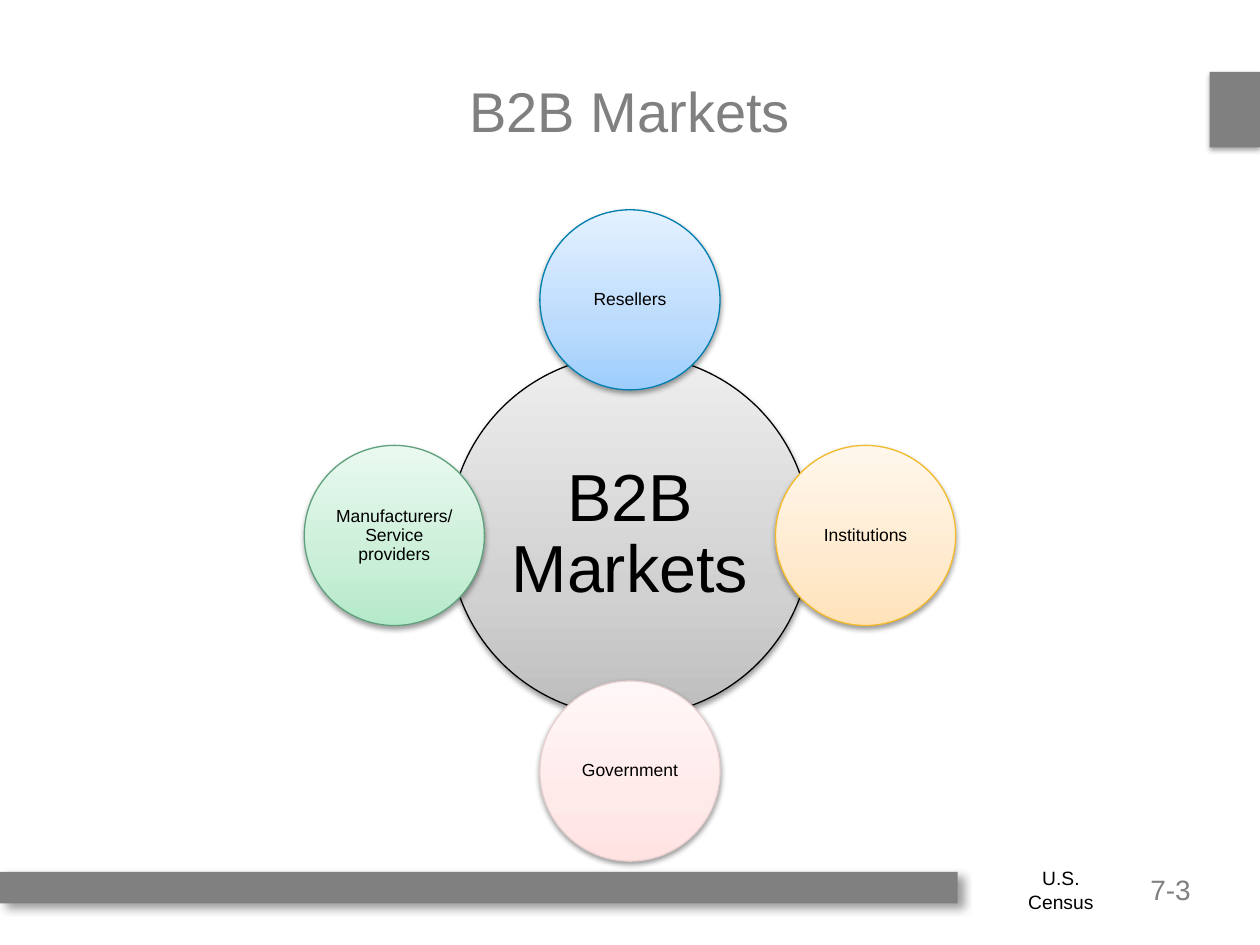
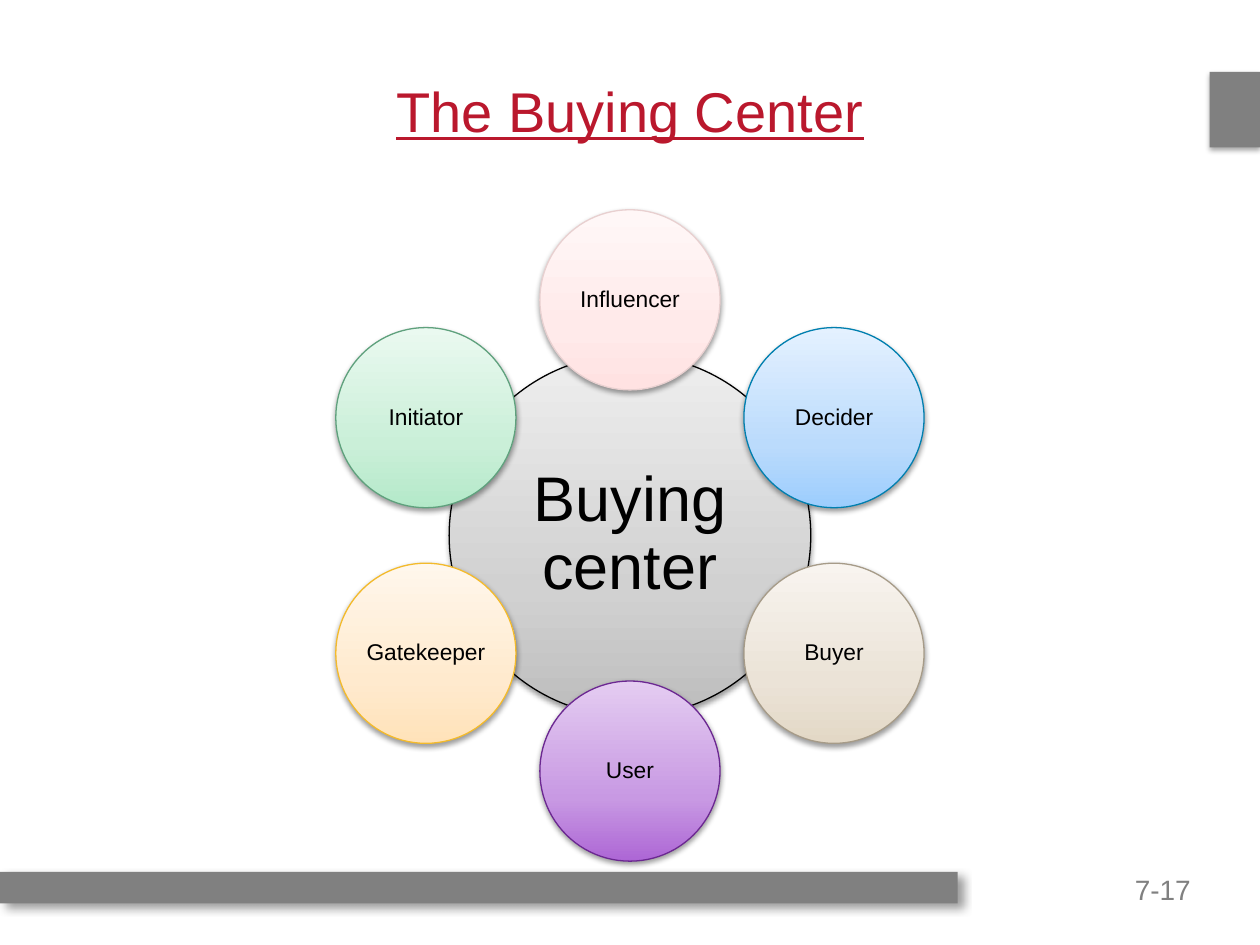
import copy
import math

from lxml import etree
from pptx import Presentation
from pptx import util as u
from pptx.dml.color import RGBColor
from pptx.enum import shapes, text
from pptx.oxml import ns

FONT = "Arial"
GRAY = RGBColor(0x80, 0x80, 0x80)
RED = RGBColor(0xBA, 0x18, 0x2D)
BLACK = RGBColor(0x00, 0x00, 0x00)
WHITE = RGBColor(0xFF, 0xFF, 0xFF)

# Each circle style: outline, then gradient colours from bottom to top
HUB_GRAY = (BLACK, RGBColor(0xBD, 0xBD, 0xBD), RGBColor(0xD1, 0xD1, 0xD1), RGBColor(0xEE, 0xEE, 0xEE))
BLUE = (RGBColor(0x00, 0x7F, 0xAF), RGBColor(0x9C, 0xCD, 0xFD), RGBColor(0xBB, 0xDB, 0xFC), RGBColor(0xE4, 0xF1, 0xFF))
ORANGE = (RGBColor(0xF3, 0xBA, 0x2B), RGBColor(0xFF, 0xE2, 0xB9), RGBColor(0xFF, 0xEA, 0xCE), RGBColor(0xFF, 0xF7, 0xEC))
PINK = (RGBColor(0xE8, 0xD0, 0xD0), RGBColor(0xFF, 0xE2, 0xE2), RGBColor(0xFF, 0xEA, 0xEA), RGBColor(0xFF, 0xF7, 0xF7))
GREEN = (RGBColor(0x5F, 0xA1, 0x7D), RGBColor(0xB4, 0xE9, 0xC9), RGBColor(0xCA, 0xEF, 0xD8), RGBColor(0xEA, 0xF9, 0xF0))
BEIGE = (RGBColor(0xA6, 0x9B, 0x88), RGBColor(0xE3, 0xD8, 0xC6), RGBColor(0xEB, 0xE3, 0xD7), RGBColor(0xF8, 0xF4, 0xEF))
PURPLE = (RGBColor(0x6B, 0x28, 0x91), RGBColor(0xAD, 0x66, 0xD5), RGBColor(0xC8, 0x99, 0xE3), RGBColor(0xE4, 0xCC, 0xF1))
GRADIENT_POSITIONS = (0, 0.35, 1)

# Radial diagram geometry, in inches
CENTER_X, CENTER_Y = 5, 4.25
ORBIT_RADIUS = 1.87
HUB_SIZE, SATELLITE_SIZE = 2.87, 1.43

# Satellites run clockwise from the top
SLIDES = [
    {
        "title": "B2B Markets", "title_color": GRAY, "underline": None, "number": "7-3",
        "hub": "B2B Markets", "hub_size": 38, "satellite_size": 10, "margin": 0.01,
        "satellites": [("Resellers", BLUE), ("Institutions", ORANGE), ("Government", PINK),
                       ("Manufacturers/ Service providers", GREEN)],
        "source": "U.S.\vCensus",
    },
    {
        "title": "The Buying Center", "title_color": RED, "underline": True, "number": "7-17",
        "hub": "Buying center", "hub_size": 36, "satellite_size": 13, "margin": 0.02,
        "satellites": [("Influencer", PINK), ("Decider", BLUE), ("Buyer", BEIGE),
                       ("User", PURPLE), ("Gatekeeper", ORANGE), ("Initiator", GREEN)],
        "source": None,
    },
]


def add_shadow(shape, opacity, blur, distance, angle):
    shape.shadow.inherit = False
    effects = shape._element.spPr.find(ns.qn("a:effectLst"))
    shadow = etree.SubElement(effects, ns.qn("a:outerShdw"), blurRad=str(u.Pt(blur)),
                              dist=str(u.Pt(distance)), dir=str(angle * 60000),
                              algn="tl", rotWithShape="0")
    color = etree.SubElement(shadow, ns.qn("a:srgbClr"), val=str(BLACK))
    etree.SubElement(color, ns.qn("a:alpha"), val=str(opacity * 1000))


def write_text(shape, words, size, color, margins, align=text.PP_ALIGN.CENTER,
               anchor=text.MSO_ANCHOR.MIDDLE, spacing=1.0):
    frame = shape.text_frame
    frame.word_wrap = True
    frame.vertical_anchor = anchor
    frame.margin_left = frame.margin_right = u.Inches(margins[0])
    frame.margin_top = frame.margin_bottom = u.Inches(margins[1])
    paragraph = frame.paragraphs[0]
    paragraph.text = words
    paragraph.alignment = align
    paragraph.line_spacing = spacing
    for run in paragraph.runs:
        run.font.name = FONT
        run.font.size = u.Pt(size)
        run.font.color.rgb = color
    return paragraph


presentation = Presentation()
presentation.slide_width = u.Inches(10)
presentation.slide_height = u.Inches(7.5)

for content in SLIDES:
    slide = presentation.slides.add_slide(presentation.slide_layouts[6])
    slide.background.fill.solid()
    slide.background.fill.fore_color.rgb = WHITE

    # Page number
    number = slide.shapes.add_textbox(u.Inches(7.5), u.Inches(6.92), u.Inches(1.95), u.Inches(0.25))
    write_text(number, content["number"], 16, GRAY, (0, 0), text.PP_ALIGN.RIGHT,
               text.MSO_ANCHOR.TOP, 1.02)

    # Side tab and bottom band
    for left, top, width, height, shadow in (
        (9.6, 0.57, 0.4, 0.6, (35, 3.1, 1.8, 90)),
        (0, 6.92, 7.6, 0.25, (38, 5, 4, 45)),
    ):
        bar = slide.shapes.add_shape(shapes.MSO_SHAPE.RECTANGLE, u.Inches(left), u.Inches(top),
                                     u.Inches(width), u.Inches(height))
        bar.fill.solid()
        bar.fill.fore_color.rgb = GRAY
        bar.line.fill.background()
        add_shadow(bar, *shadow)

    # Title
    title = slide.shapes.add_textbox(u.Inches(0.6), u.Inches(0.25), u.Inches(8.8), u.Inches(1.25))
    title_paragraph = write_text(title, content["title"], 32, content["title_color"], (0.1, 0.05))
    title_paragraph.runs[0].font.underline = content["underline"]

    # Hub in the middle, satellites evenly spaced around it
    circles = [(content["hub"], HUB_GRAY, CENTER_X, CENTER_Y, HUB_SIZE, content["hub_size"], 0.05)]
    for index, (label, style) in enumerate(content["satellites"]):
        angle = 2 * math.pi * index / len(content["satellites"])
        circles.append((label, style, CENTER_X + ORBIT_RADIUS * math.sin(angle),
                        CENTER_Y - ORBIT_RADIUS * math.cos(angle),
                        SATELLITE_SIZE, content["satellite_size"], content["margin"]))

    for label, (outline, *gradient), x, y, diameter, font_size, margin in circles:
        circle = slide.shapes.add_shape(
            shapes.MSO_SHAPE.OVAL, u.Inches(x - diameter / 2), u.Inches(y - diameter / 2),
            u.Inches(diameter), u.Inches(diameter))
        circle.fill.gradient()
        circle.fill.gradient_angle = 90
        stop_list = circle._element.spPr.find(".//" + ns.qn("a:gsLst"))
        stop_list.append(copy.deepcopy(stop_list[-1]))
        for stop, color, position in zip(circle.fill.gradient_stops, gradient, GRADIENT_POSITIONS):
            stop.color.rgb = color
            stop.position = position
        circle.line.color.rgb = outline
        circle.line.width = u.Pt(0.75)
        add_shadow(circle, 38, 3.1, 1.6, 90)
        write_text(circle, label, font_size, BLACK, (margin, margin), spacing=0.9)

    # Data source label
    if content["source"]:
        source = slide.shapes.add_textbox(u.Inches(7.92), u.Inches(6.83), u.Inches(1), u.Inches(0.46))
        write_text(source, content["source"], 11, BLACK, (0.09, 0.05), anchor=text.MSO_ANCHOR.TOP)

presentation.save("out.pptx")
